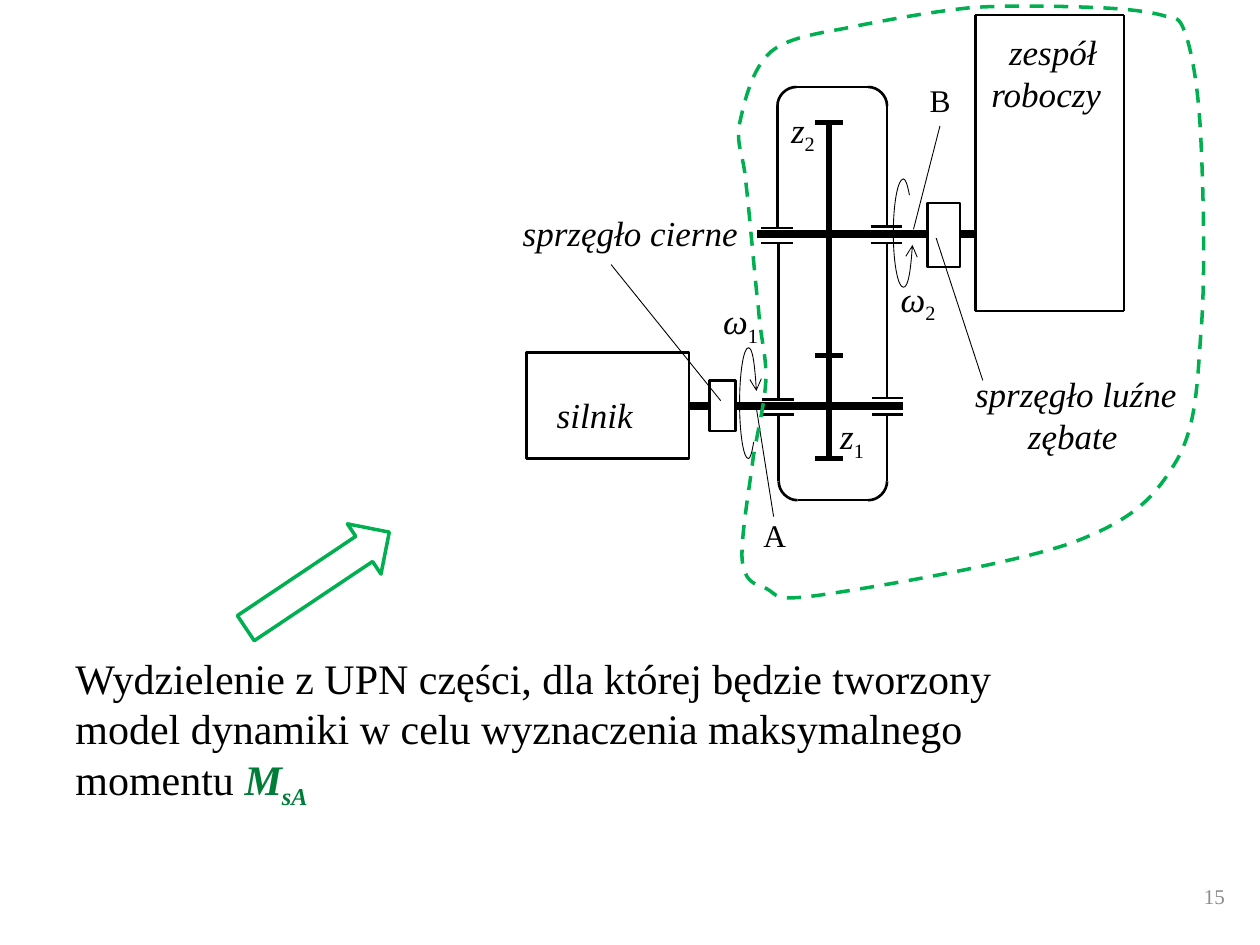
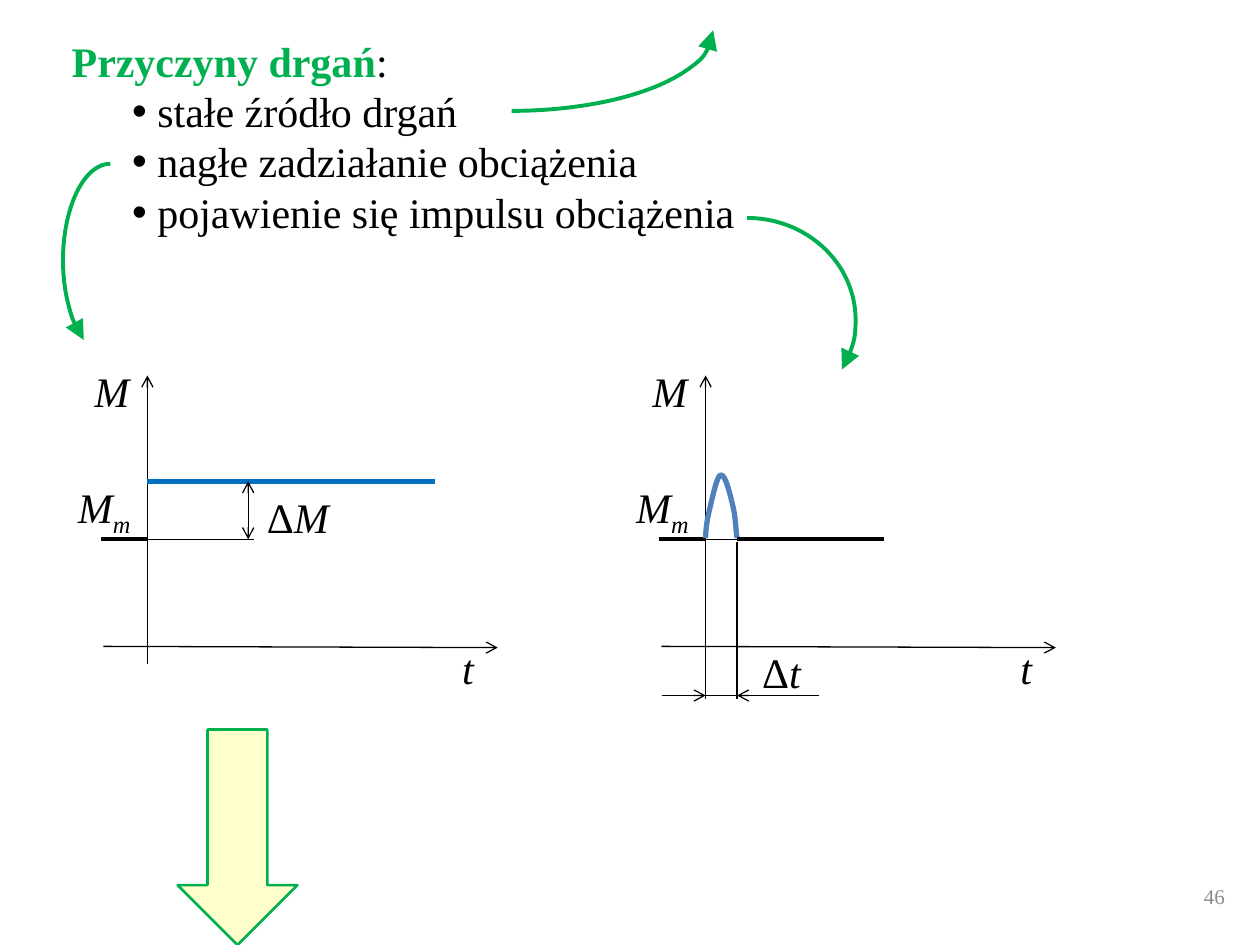
from dataclasses import dataclass
from typing import Any

from lxml.etree import SubElement
from pptx import Presentation
from pptx.dml.color import RGBColor
from pptx.enum.dml import MSO_LINE
from pptx.enum.shapes import MSO_CONNECTOR, MSO_SHAPE
from pptx.enum.text import MSO_ANCHOR, PP_ALIGN
from pptx.oxml.ns import qn
from pptx.util import Pt

PX = 9144


@dataclass(frozen=True)
class Theme:
    font: str = "Times New Roman"
    bullet_font: str = "Arial"
    ink: str = "000000"
    paper: str = "FFFFFF"
    green: str = "00B050"
    dark_green: str = "007E39"
    gray: str = "8C8C8C"
    blue: str = "0070C0"
    pulse: str = "4F81BD"
    cream: str = "FFFFCC"
    body: int = 24
    label: int = 20
    mark: int = 18
    number: int = 12


T = Theme()


def stroke(s, color, width, head=None, tail=None, dash=None):
    s.line.color.rgb = RGBColor.from_string(color)
    s.line.width = Pt(width)
    if dash:
        s.line.dash_style = dash
    ln = s.element.spPr.find(qn("a:ln"))
    for tag, kind in (("a:headEnd", head), ("a:tailEnd", tail)):
        if kind:
            end = SubElement(ln, qn(tag), type=kind)
            if kind == "triangle":
                end.set("w", "lg")
                end.set("len", "lg")
    SubElement(s.element.spPr, qn("a:effectLst"))


def bend(s):
    lines = list(s.element.iter(qn("a:lnTo")))
    for first, second, third in zip(lines[::3], lines[1::3], lines[2::3]):
        first.tag = qn("a:cubicBezTo")
        for other in (second, third):
            first.append(other[0])
            other.getparent().remove(other)


@dataclass
class Region:
    shapes: Any
    x: int = 0
    y: int = 0

    def at(self, x, y):
        return round((self.x + x) * PX), round((self.y + y) * PX)

    def line(self, x1, y1, x2, y2, width, color=T.ink, **ends):
        s = self.shapes.add_connector(
            MSO_CONNECTOR.STRAIGHT, *self.at(x1, y1), *self.at(x2, y2))
        stroke(s, color, width, **ends)

    def shape(self, kind, box, width, color=T.ink, fill=None, rotation=0,
              flips=(), start=None, head=None):
        x, y, w, h = box
        s = self.shapes.add_shape(kind, *self.at(x, y), w * PX, h * PX)
        stroke(s, color, width, head)
        if fill:
            s.fill.solid()
            s.fill.fore_color.rgb = RGBColor.from_string(fill)
        else:
            s.fill.background()
        s.rotation = rotation
        for flip in flips:
            s.element.spPr.find(qn("a:xfrm")).set(flip, "1")
        if start:
            s.adjustments[0] = start

    def curve(self, start, points, width, color=T.ink, close=False, **ends):
        fb = self.shapes.build_freeform(*self.at(*start), scale=1.0)
        fb.add_line_segments([self.at(*p) for p in points], close=close)
        s = fb.convert_to_shape()
        bend(s)
        s.fill.background()
        stroke(s, color, width, **ends)

    def text(self, box, size, *paragraphs, color=T.ink, indents=()):
        x, y, w, h = box
        s = self.shapes.add_textbox(*self.at(x, y), w * PX, h * PX)
        tf = s.text_frame
        tf.word_wrap = True
        for i, runs in enumerate(paragraphs):
            p = tf.add_paragraph() if i else tf.paragraphs[0]
            if indents:
                p._p.get_or_add_pPr().set("marL", str(indents[i] * PX))
            for words, style, *own in runs:
                r = p.add_run()
                r.text = words
                f = r.font
                f.name, f.size = T.font, Pt(size)
                f.bold, f.italic = "b" in style, "i" in style
                f.color.rgb = RGBColor.from_string(own[0] if own else color)
                if "s" in style:
                    r._r.get_or_add_rPr().set("baseline", "-25000")
        return tf


def group(slide, x, y):
    return Region(slide.shapes.add_group_shape().shapes, x, y)


def page_number(slide, number):
    tf = Region(slide.shapes).text((938, 691, 44, 40), T.number,
                                   [(number, "")], color=T.gray)
    tf.vertical_anchor = MSO_ANCHOR.MIDDLE
    tf.paragraphs[0].alignment = PP_ALIGN.RIGHT


def housing_half(rg, left, right, seam, edge):
    d = 15 if edge > seam else -15
    for wall, turn in ((left, 15), (right, -15)):
        rg.line(wall, edge - d, wall, seam, 1.5)
        rg.curve((wall + turn, edge), [
            (wall + turn * 7 / 15, edge), (wall, edge - d * 7 / 15),
            (wall, edge - d)], 1.5)
    rg.line(left + 15, edge, right - 15, edge, 1.5)


def rotation_arrow(rg, cx, cy, rx, ry):
    turn = [(0.9, -0.22), (0.75, -0.68), (0.43, -1), (0, -1),
            (-0.55, -1), (-1, -0.55), (-1, 0),
            (-1, 0.55), (-0.55, 1), (0, 1),
            (0.2, 1), (0.4, 0.9), (0.6, 0.7)]
    start, *points = [(cx + a * rx, cy + b * ry) for a, b in turn]
    rg.curve(start, points, 0.5, head="arrow")


def drive_train(slide, x, y):
    rg = group(slide, x, y)
    rg.line(201, 186, 373, 186, 4.5)
    rg.line(92, 322, 317, 322, 4.5)
    for left, *sides in ((204, 181, 193), (291, 180, 193),
                         (205, 317, 329), (292, 316, 329)):
        for side in sides:
            rg.line(left, side, left + 25, side, 1.5)
    rg.line(258, 98, 258, 364, 3)
    for rim in (97, 282, 364):
        rg.line(247, rim, 269, rim, 3)
    housing_half(rg, 217, 304, 181, 69)
    housing_half(rg, 218, 304, 329, 397)
    for wall in (218, 304):
        rg.line(wall, 194, wall, 316, 1.5)
    for box in ((18, 280, 129, 84), (163, 302, 21, 40), (336, 161, 26, 51)):
        rg.shape(MSO_SHAPE.RECTANGLE, box, 1.5, fill=T.paper)
    for side in (374, 492):
        rg.line(side, 12, side, 247, 1.5)
    for side in (12, 247):
        rg.line(374, side, 492, side, 1.5)
    for leader in ((172, 318, 85, 210), (380, 302, 343, 189),
                   (325, 182, 346, 100), (200, 322, 214, 410)):
        rg.line(*leader, 0.5)
    rotation_arrow(rg, 194, 320, 7, 44)
    rotation_arrow(rg, 317, 185, 8, -43)

    rg.text((5, 163, 198, 56), T.label, [("sprzęgło cierne", "i")])
    rg.text((32, 307, 91, 54), T.label, [("silnik", "i")])
    rg.text((364, 291, 194, 91), T.label, [("sprzęgło luźne", "i")],
            [("zębate", "i")], indents=(0, 42))
    rg.text((377, 19, 146, 75), T.label, [("zespół", "i")],
            [("roboczy", "i")], indents=(14, 0))
    for box, symbol, index in (
            ((257, 324, 52, 57), "z", "1"), ((218, 81, 49, 56), "z", "2"),
            ((164, 233, 56, 59), "ω", "1"), ((305, 215, 56, 59), "ω", "2")):
        rg.text(box, T.label, [(symbol, "i"), (index, "s")])
    rg.text((328, 59, 60, 50), T.mark, [("B", "")])
    rg.text((196, 405, 60, 50), T.mark, [("A", "")])


def separated_part(slide, x, y):
    Region(slide.shapes, x, y).curve((8, 141), [
        (11, 166), (15, 216), (18, 241),
        (20, 267), (24, 276), (24, 296),
        (23, 316), (18, 335), (14, 358),
        (11, 382), (4, 422), (5, 440),
        (7, 457), (13, 459), (24, 463),
        (34, 468), (28, 474), (69, 468),
        (110, 462), (223, 443), (269, 426),
        (316, 408), (332, 391), (349, 363),
        (365, 336), (366, 305), (369, 262),
        (373, 218), (371, 144), (369, 104),
        (367, 64), (362, 38), (357, 23),
        (351, 7), (350, 12), (338, 8),
        (326, 5), (310, 3), (285, 2),
        (260, 1), (219, 0), (188, 2),
        (157, 5), (125, 11), (99, 16),
        (72, 22), (44, 24), (28, 37),
        (13, 50), (7, 76), (3, 94),
        (0, 112), (6, 117), (8, 141),
    ], 2, T.green, close=True, dash=MSO_LINE.DASH)


def model_note(slide, x, y):
    rg = Region(slide.shapes, x, y)
    rg.text((0, 121, 809, 131), T.body, [
        ("Wydzielenie z UPN części, dla której będzie tworzony model dynamiki "
         "w celu wyznaczenia maksymalnego momentu ", ""),
        ("M", "bi", T.dark_green), ("sA", "bis", T.dark_green)])
    rg.shape(MSO_SHAPE.UP_ARROW, (178, 0, 48, 137), 2, T.green, rotation=56.2)


def causes(slide, x, y):
    rg = Region(slide.shapes, x, y)
    tf = rg.text((0, 0, 702, 172), T.body,
                 [("Przyczyny drgań", "b", T.green), (":", "")],
                 [("stałe źródło drgań", "")],
                 [("nagłe zadziałanie obciążenia", "")],
                 [("pojawienie się impulsu obciążenia", "")])
    for p in tf.paragraphs[1:]:
        pPr = p._p.get_or_add_pPr()
        pPr.set("marL", str(68 * PX))
        pPr.set("indent", str(-20 * PX))
        SubElement(pPr, qn("a:buFont"), typeface=T.bullet_font)
        SubElement(pPr, qn("a:buChar"), char="•")
    for box, rotation, flips, start in (
            ((295, -159, 128, 320), 90, (), None),
            ((465, 145, 162, 172), 270, ("flipV",), 145.47),
            ((-36, 146, 153, 75), 90, ("flipH", "flipV"), 119.01)):
        rg.shape(MSO_SHAPE.ARC, box, 2.25, T.green, rotation=rotation,
                 flips=flips, start=start, head="triangle")


def load_axes(slide, x, y, foot):
    rg = group(slide, x, y)
    rg.line(30, 228, 343, 229, 0.75, tail="arrow")
    rg.line(65, foot, 65, 13, 0.75, tail="arrow")
    rg.line(28, 143, 65, 143, 2.25)
    rg.line(65, 143, 150, 143, 0.75)
    rg.text((0, 92, 67, 50), T.body, [("M", "i"), ("m", "is")])
    rg.text((13, 0, 65, 50), T.body, [("M", "i")])
    rg.text((305, 220, 52, 50), T.body, [("t", "i")])
    return rg


def step_load(slide, x, y):
    rg = load_axes(slide, x, y, 242)
    rg.line(65, 97, 293, 97, 3, T.blue)
    rg.line(145, 97, 145, 143, 0.75, head="arrow", tail="arrow")
    rg.text((150, 100, 85, 50), T.body, [("Δ", ""), ("M", "i")])


def pulse_load(slide, x, y):
    rg = load_axes(slide, x, y, 270)
    rg.curve((65, 142), [
        (65, 137), (66, 128), (68, 120),
        (70, 112), (74, 92), (77, 92),
        (81, 91), (85, 110), (87, 118),
        (89, 127), (89, 137), (90, 142),
    ], 3, T.pulse)
    rg.line(90, 143, 207, 143, 2.25)
    rg.line(90, 145, 90, 270, 0.75)
    rg.line(30, 267, 65, 267, 0.75, tail="arrow")
    rg.line(155, 267, 90, 267, 0.75, tail="arrow")
    rg.line(58, 267, 97, 267, 0.75)
    rg.text((100, 223, 57, 50), T.body, [("Δ", ""), ("t", "i")])


def separation_slide(slide):
    page_number(slide, "15")
    drive_train(slide, 400, 0)
    separated_part(slide, 584, 4)
    model_note(slide, 50, 392)


def causes_slide(slide):
    page_number(slide, "46")
    causes(slide, 47, 23)
    step_load(slide, 52, 285)
    pulse_load(slide, 495, 285)
    Region(slide.shapes).shape(MSO_SHAPE.DOWN_ARROW, (141, 579, 95, 171), 1.5,
                               T.green, fill=T.cream)


def main():
    prs = Presentation()
    prs.slide_width, prs.slide_height = 1000 * PX, 750 * PX
    for build in (separation_slide, causes_slide):
        build(prs.slides.add_slide(prs.slide_layouts[6]))
    prs.save("out.pptx")


if __name__ == "__main__":
    main()
